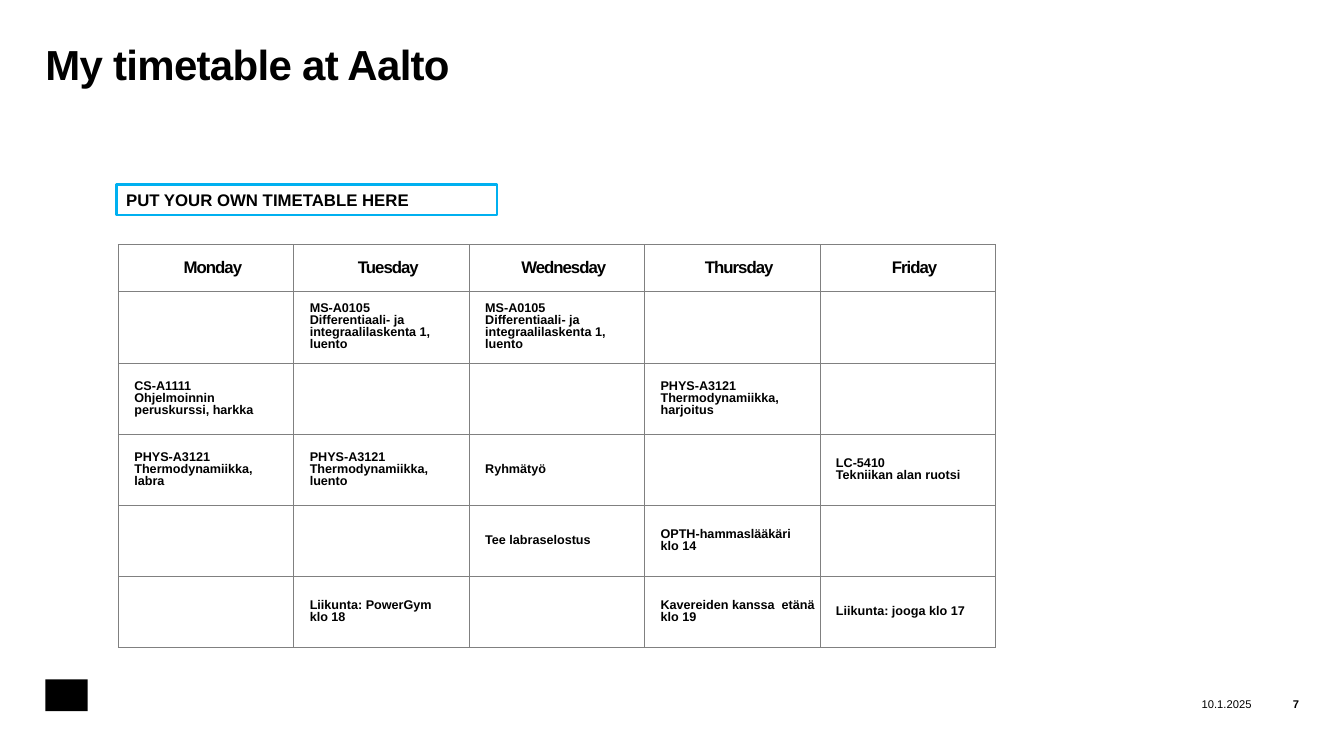
from dataclasses import dataclass

from lxml import etree
from pptx import Presentation
from pptx import util as u
from pptx.dml import color
from pptx.enum import shapes, text
from pptx.oxml import ns

Pt = u.Pt
LEFT, MID, RIGHT = text.PP_ALIGN.LEFT, text.PP_ALIGN.CENTER, text.PP_ALIGN.RIGHT


@dataclass(frozen=True)
class Theme:
    font: str = "Arial"
    ink: str = "000000"
    paper: str = "FFFFFF"
    frame: str = "00B0F0"
    grid: str = "808080"
    title: float = 30
    head: float = 12
    body: float = 9
    small: float = 8


class Page:
    def __init__(self, deck, theme):
        self.theme = theme
        self.slide = deck.slides.add_slide(deck.slide_layouts[6])

    def rgb(self, code):
        return color.RGBColor.from_string(code)

    def typeset(self, frame, words, size, bold=True, align=LEFT, lead=1.0, track=0):
        frame.word_wrap = True
        frame.text = words
        for para in frame.paragraphs:
            para.alignment = align
            para.line_spacing = lead
            font = para.font
            font.name, font.size, font.bold = self.theme.font, Pt(size), bold
            font.color.rgb = self.rgb(self.theme.ink)
            if track:
                for props in para._p.iter(ns.qn("a:defRPr")):
                    props.set("spc", str(round(track * 100)))

    def label(self, box, words, size, anchor=text.MSO_ANCHOR.MIDDLE, **style):
        frame = self.slide.shapes.add_textbox(*map(Pt, box)).text_frame
        frame.margin_left = frame.margin_right = 0
        frame.margin_top = frame.margin_bottom = 0
        frame.vertical_anchor = anchor
        self.typeset(frame, words, size, **style)

    def block(self, box, fill, line=None, words=""):
        shape = self.slide.shapes.add_shape(
            shapes.MSO_SHAPE.RECTANGLE, *map(Pt, box))
        shape.shadow.inherit = False
        shape.fill.solid()
        shape.fill.fore_color.rgb = self.rgb(fill)
        if line:
            shape.line.color.rgb = self.rgb(line)
            shape.line.width = Pt(2)
        else:
            shape.line.fill.background()
        if words:
            self.typeset(shape.text_frame, words, self.theme.head)

    def border(self, cell):
        props = cell._tc.get_or_add_tcPr()
        for spot, side in enumerate(("lnL", "lnR", "lnT", "lnB")):
            line = etree.Element(ns.qn("a:" + side), w=str(Pt(0.5)))
            fill = etree.SubElement(line, ns.qn("a:solidFill"))
            etree.SubElement(fill, ns.qn("a:srgbClr"), val=self.theme.grid)
            props.insert(spot, line)

    def table(self, left, top, wide, heights, rows):
        count = len(rows[0])
        table = self.slide.shapes.add_table(
            len(rows), count, Pt(left), Pt(top),
            Pt(wide * count), Pt(sum(heights))).table
        table.first_row = table.horz_banding = False
        for col in table.columns:
            col.width = Pt(wide)
        for r, row in enumerate(rows):
            table.rows[r].height = Pt(heights[r])
            for c, words in enumerate(row):
                cell = table.cell(r, c)
                cell.fill.background()
                self.border(cell)
                cell.vertical_anchor = text.MSO_ANCHOR.MIDDLE
                cell.margin_left = Pt(11.5 if r else 10)
                cell.margin_right = cell.margin_top = cell.margin_bottom = 0
                if r == 0:
                    self.typeset(cell.text_frame, words, self.theme.head,
                                 align=MID, track=-0.7)
                elif words:
                    self.typeset(cell.text_frame, words, self.theme.body, lead=0.85)


# Line ends: \n starts a paragraph, \v breaks a line inside one
MATH = "MS-A0105\nDifferentiaali- ja\nintegraalilaskenta 1, \vluento"
HEAT = "PHYS-A3121\nThermodynamiikka, "
WEEK = [
    ["Monday", "Tuesday", "Wednesday", "Thursday", "Friday"],
    ["", MATH, MATH, "", ""],
    ["CS-A1111\nOhjelmoinnin\nperuskurssi, harkka", "", "",
     HEAT + "harjoitus", ""],
    [HEAT + "\vlabra", HEAT + "luento", "Ryhmätyö", "",
     "LC-5410\nTekniikan alan ruotsi"],
    ["", "", "Tee labraselostus", "OPTH-hammaslääkäri \vklo 14", ""],
    ["", "Liikunta: PowerGym \vklo 18", "",
     "Kavereiden kanssa  etänä klo 19", "Liikunta: jooga klo 17"],
]


def main():
    deck = Presentation()
    deck.slide_width, deck.slide_height = Pt(960), Pt(540)
    theme = Theme()
    page = Page(deck, theme)

    # Title
    page.label((32.4, 31.7, 896, 85), "My timetable at Aalto", theme.title,
               anchor=text.MSO_ANCHOR.TOP, lead=0.9, track=-0.5)

    # Footer: emblem block, date, page number
    page.block((32.4, 485.3, 30.2, 22.7), theme.ink)
    page.label((803.5, 496.8, 90.5, 11.5), "10.1.2025", theme.small,
               bold=False, align=RIGHT)
    page.label((894, 496.8, 34, 11.5), "7", theme.small, align=RIGHT)

    # Timetable
    page.table(84.5, 174.7, 125.3, [33.6] + [50.9] * 5, WEEK)

    # Prompt above the timetable
    page.block((83, 131.8, 272, 21.8), theme.paper, theme.frame,
               "PUT YOUR OWN TIMETABLE HERE")

    deck.save("out.pptx")


if __name__ == "__main__":
    main()
